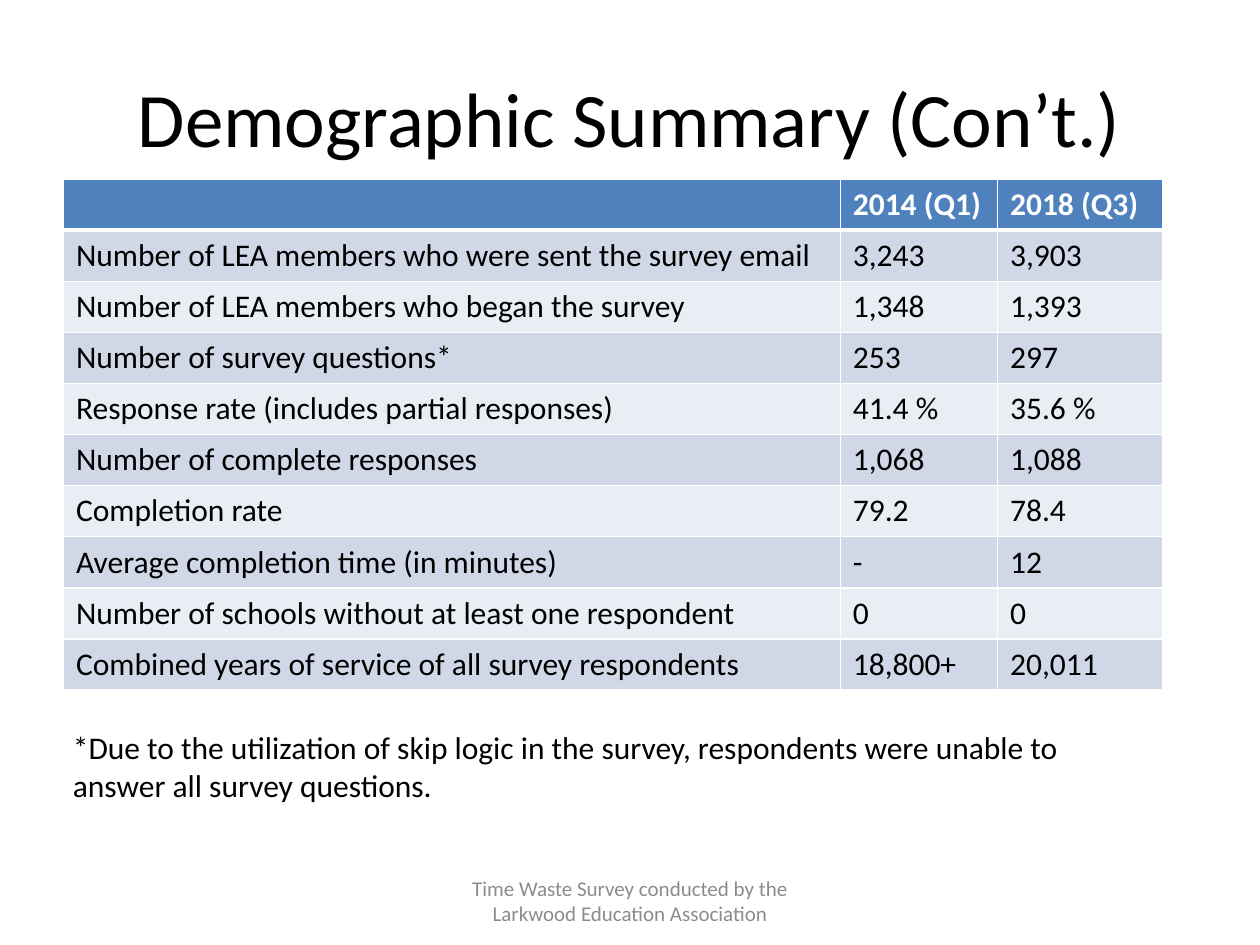
import pptx
import pptx.dml.color
import pptx.enum.text
import pptx.util
from lxml import etree
from pptx.oxml.ns import qn

Cm = pptx.util.Cm
Pt = pptx.util.Pt
RGBColor = pptx.dml.color.RGBColor
ALIGN = pptx.enum.text.PP_ALIGN
ANCHOR = pptx.enum.text.MSO_ANCHOR

BLACK = RGBColor(0x00, 0x00, 0x00)
WHITE = RGBColor(0xFF, 0xFF, 0xFF)
GREY = RGBColor(0x8C, 0x8C, 0x8C)
HEADER_BLUE = RGBColor(0x4F, 0x81, 0xBD)
BANDS = (RGBColor(0xD0, 0xD8, 0xE8), RGBColor(0xE9, 0xED, 0xF4))

FONT = "Calibri"
ROWS = [
    ("", "2014 (Q1)", "2018 (Q3)"),
    ("Number of LEA members who were sent the survey email", "3,243", "3,903"),
    ("Number of LEA members who began the survey", "1,348", "1,393"),
    ("Number of survey questions*", "253", "297"),
    ("Response rate (includes partial responses)", "41.4 %", "35.6 %"),
    ("Number of complete responses", "1,068", "1,088"),
    ("Completion rate", "79.2", "78.4"),
    ("Average completion time (in minutes)", "-", "12"),
    ("Number of schools without at least one respondent", "0", "0"),
    ("Combined years of service of all survey respondents", "18,800+", "20,011"),
]
COLUMN_WIDTHS = (15.66, 3.17, 3.32)
ROW_HEIGHT = 1.03
TABLE_LEFT, TABLE_TOP = 1.28, 3.61

# text, (left, top, width, height), size, colour, alignment, anchor
TEXTS = [
    ("Demographic Summary (Con’t.)", (1.27, 0.76, 22.86, 3.18),
     44, BLACK, ALIGN.CENTER, ANCHOR.MIDDLE),
    ("*Due to the utilization of skip logic in the survey, respondents were "
     "unable to answer all survey questions.", (1.22, 14.55, 22.15, 1.8),
     18, BLACK, ALIGN.LEFT, ANCHOR.TOP),
    ("Time Waste Survey conducted by the Larkwood Education Association",
     (8.68, 17.65, 8.04, 1.01), 12, GREY, ALIGN.CENTER, ANCHOR.MIDDLE),
]


def write(paragraph, text, size, color, bold=False):
    span = paragraph.add_run()
    span.text = text
    font_format = {"name": FONT, "size": Pt(size), "bold": bold}
    for name, value in font_format.items():
        setattr(span.font, name, value)
    span.font.color.rgb = color


def add_text(page, text, place, size, color, align, anchor):
    box = page.shapes.add_textbox(*map(Cm, place))
    frame = box.text_frame
    frame.word_wrap = True
    frame.vertical_anchor = anchor
    frame.paragraphs[0].alignment = align
    write(frame.paragraphs[0], text, size, color)


def set_borders(cell, widths):
    """Draw white cell edges; widths maps L, R, T, B to points."""
    properties = cell._tc.get_or_add_tcPr()
    for side, width in widths.items():
        line = etree.SubElement(properties, qn(f"a:ln{side}"), w=str(Pt(width)))
        fill = etree.SubElement(line, qn("a:solidFill"))
        etree.SubElement(fill, qn("a:srgbClr"), val=str(WHITE))


def add_summary_table(page):
    width, height = sum(COLUMN_WIDTHS), ROW_HEIGHT * len(ROWS)
    table = page.shapes.add_table(
        len(ROWS), len(COLUMN_WIDTHS),
        Cm(TABLE_LEFT), Cm(TABLE_TOP), Cm(width), Cm(height)).table
    for column, column_width in zip(table.columns, COLUMN_WIDTHS):
        column.width = Cm(column_width)
    for r, values in enumerate(ROWS):
        header = r == 0
        for c, value in enumerate(values):
            cell = table.cell(r, c)
            set_borders(cell, {"L": 1, "R": 1, "T": 3 if r == 1 else 1,
                               "B": 3 if header else 1})
            cell.fill.solid()
            cell.fill.fore_color.rgb = HEADER_BLUE if header else BANDS[(r - 1) % 2]
            if value:
                write(cell.text_frame.paragraphs[0], value, 18,
                      WHITE if header else BLACK, header)


def main():
    deck = pptx.Presentation()
    deck.slide_width, deck.slide_height = Cm(25.4), Cm(19.05)
    page = deck.slides.add_slide(deck.slide_layouts[6])
    title, *notes = TEXTS
    add_text(page, *title)
    add_summary_table(page)
    for note in notes:
        add_text(page, *note)
    deck.save("out.pptx")


if __name__ == "__main__":
    main()
